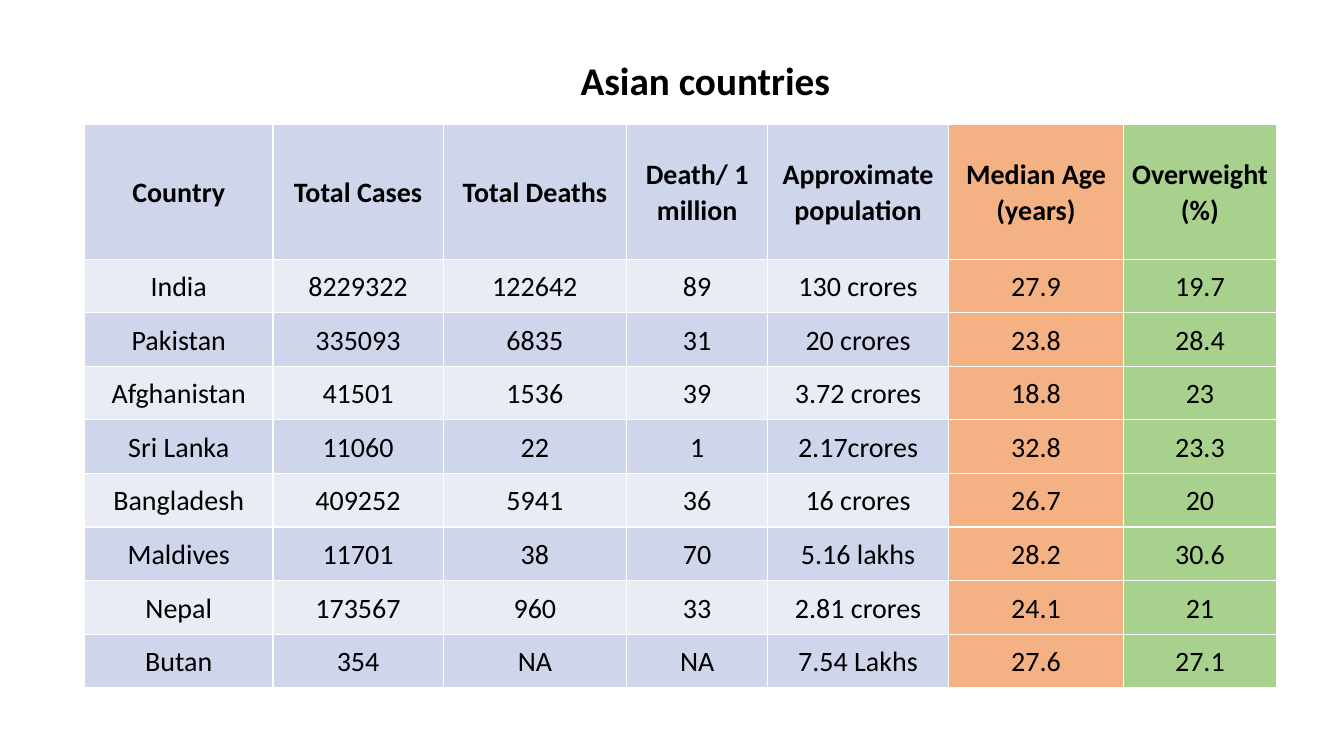
from lxml import etree
from pptx import Presentation
from pptx.dml.color import RGBColor
from pptx.enum import text
from pptx.oxml import ns
from pptx.util import Cm, Pt

TITLE = "Asian countries"
ROWS = [
    ("Country", "Total Cases", "Total Deaths", "Death/ 1 million",
     "Approximate population", "Median Age (years)", "Overweight (%)"),
    ("India", "8229322", "122642", "89", "130 crores", "27.9", "19.7"),
    ("Pakistan", "335093", "6835", "31", "20 crores", "23.8", "28.4"),
    ("Afghanistan", "41501", "1536", "39", "3.72 crores", "18.8", "23"),
    ("Sri Lanka", "11060", "22", "1", "2.17crores", "32.8", "23.3"),
    ("Bangladesh", "409252", "5941", "36", "16 crores", "26.7", "20"),
    ("Maldives", "11701", "38", "70", "5.16 lakhs", "28.2", "30.6"),
    ("Nepal", "173567", "960", "33", "2.81 crores", "24.1", "21"),
    ("Butan", "354", "NA", "NA", "7.54 Lakhs", "27.6", "27.1"),
]
COL_WIDTHS = [4.75, 4.29, 4.62, 3.56, 4.55, 4.42, 3.84]
HEADER_HEIGHT, ROW_HEIGHT = 3.39, 1.35
BANDS = ["CFD5EA", "E9EBF5"]
COLUMN_FILLS = {5: "F4B183", 6: "A9D18E"}
FONT = {"name": "Calibri", "bold": True}
CELL_FORMAT = {
    "margin_left": Cm(0.18), "margin_right": Cm(0.18),
    "margin_top": 0, "margin_bottom": 0,
    "vertical_anchor": text.MSO_ANCHOR.MIDDLE,
}
PARAGRAPH_FORMAT = {
    "alignment": text.PP_ALIGN.CENTER, "line_spacing": 1.07, "space_after": Pt(8),
}


def set_all(obj, values):
    for name, value in values.items():
        setattr(obj, name, value)


def paint(color_format, color):
    color_format.rgb = RGBColor.from_string(color)


def add_borders(cell, color="FFFFFF", width=Pt(1)):
    tc_pr = cell._tc.get_or_add_tcPr()
    for i, side in enumerate(("a:lnL", "a:lnR", "a:lnT", "a:lnB")):
        ln = etree.Element(ns.qn(side), w=str(width))
        fill = etree.SubElement(ln, ns.qn("a:solidFill"))
        etree.SubElement(fill, ns.qn("a:srgbClr"), val=color)
        tc_pr.insert(i, ln)


def add_title(slide):
    sp = slide.shapes.title
    set_all(sp, {"left": Cm(14.38), "top": Cm(1.3), "width": Cm(7.49), "height": Cm(1.45)})
    tf = sp.text_frame
    tf.text = TITLE
    set_all(tf, {"vertical_anchor": text.MSO_ANCHOR.TOP, "word_wrap": True,
                 "auto_size": text.MSO_AUTO_SIZE.SHAPE_TO_FIT_TEXT})
    p = tf.paragraphs[0]
    p.alignment = text.PP_ALIGN.LEFT
    set_all(p.runs[0].font, FONT | {"size": Pt(28)})
    paint(p.runs[0].font.color, "000000")


def add_country_table(slide):
    height = HEADER_HEIGHT + ROW_HEIGHT * (len(ROWS) - 1)
    table = slide.shapes.add_table(
        len(ROWS), len(COL_WIDTHS), Cm(2.13), Cm(3.14),
        Cm(sum(COL_WIDTHS)), Cm(height)).table
    for column, width in zip(table.columns, COL_WIDTHS):
        column.width = Cm(width)
    for r, values in enumerate(ROWS):
        table.rows[r].height = Cm(ROW_HEIGHT if r else HEADER_HEIGHT)
        for c, value in enumerate(values):
            cell = table.cell(r, c)
            cell.text = value
            set_all(cell, CELL_FORMAT)
            cell.fill.solid()
            paint(cell.fill.fore_color, COLUMN_FILLS.get(c, BANDS[r % 2]))
            add_borders(cell)
            p = cell.text_frame.paragraphs[0]
            set_all(p, PARAGRAPH_FORMAT)
            font = p.runs[0].font
            set_all(font, FONT | {"size": Pt(20), "bold": r == 0})
            paint(font.color, "000000")


def main():
    prs = Presentation()
    prs.slide_width, prs.slide_height = Cm(33.87), Cm(19.05)
    slide = prs.slides.add_slide(prs.slide_layouts.get_by_name("Title Only"))
    add_country_table(slide)
    add_title(slide)
    prs.save("out.pptx")


if __name__ == "__main__":
    main()
